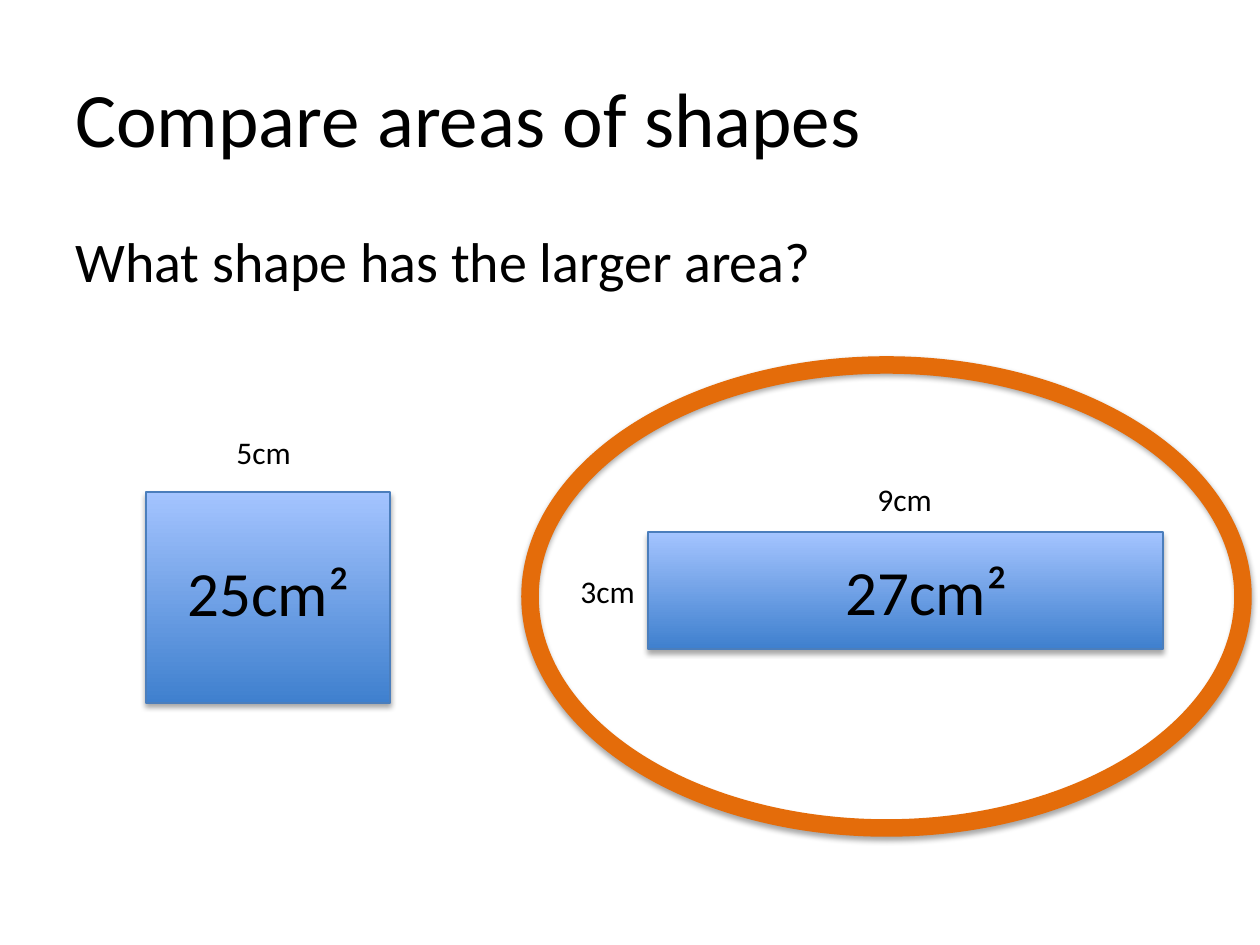
from lxml.etree import SubElement
from pptx import Presentation
from pptx.dml.color import RGBColor
from pptx.enum.shapes import MSO_SHAPE
from pptx.enum.text import MSO_ANCHOR
from pptx.oxml.ns import qn
from pptx.util import Emu, Pt

PX = 914400 / 126
FONT = "Calibri"
COLORS = {
    "text": "000000",
    "bottom": "3F80CE",
    "top": "A4C4FF",
    "outline": "4B7EBC",
    "ring": "E46C0A",
    "shadow": "000000",
}

# Boxes are left, top, width, height in px.
HEADINGS = [
    ("Compare areas of shapes", (63, 38, 1134, 158), 44, MSO_ANCHOR.MIDDLE),
    ("What shape has the larger area?", (63, 220, 1134, 624), 32, MSO_ANCHOR.TOP),
]
RECTANGLES = [(146, 492, 244, 211), (648, 532, 515, 117)]
LABEL_SIZE = (81, 50)
SIDE_LABELS = [("5cm", (224, 427)), ("9cm", (865, 474)), ("3cm", (568, 566))]
AREA_SIZE = (232, 89)
AREA_LABELS = [("25cm²", (175, 547)), ("27cm²", (833, 546))]
ANSWER_RING = (530, 365, 713, 463)


def emu(box):
    return [Emu(round(length * PX)) for length in box]


def color(name):
    return RGBColor.from_string(COLORS[name])


def add_text(page, text, box, size, anchor=MSO_ANCHOR.TOP):
    frame = page.shapes.add_textbox(*emu(box)).text_frame
    frame.word_wrap = True
    frame.vertical_anchor = anchor
    frame.text = text
    font = frame.paragraphs[0].runs[0].font
    font.name = FONT
    font.size = Pt(size)
    font.color.rgb = color("text")


def add_outlined(page, kind, box, line_color, line_width):
    """Add a preset shape with a line and a soft shadow below it."""
    shape = page.shapes.add_shape(kind, *emu(box))
    shape.line.color.rgb = color(line_color)
    shape.line.width = Pt(line_width)
    shape.shadow.inherit = False
    effects = shape._element.spPr.find(qn("a:effectLst"))
    shadow = SubElement(effects, qn("a:outerShdw"), blurRad=str(Pt(3.1)),
                        dist=str(Pt(1.8)), dir="5400000", rotWithShape="0")
    tint = SubElement(shadow, qn("a:srgbClr"), val=COLORS["shadow"])
    SubElement(tint, qn("a:alpha"), val="35000")
    return shape


def add_rectangle(page, box):
    fill = add_outlined(page, MSO_SHAPE.RECTANGLE, box, "outline", 0.75).fill
    fill.gradient()
    fill.gradient_angle = 90
    for stop, position, name in zip(fill.gradient_stops, (0, 1), ("bottom", "top")):
        stop.position = position
        stop.color.rgb = color(name)


def main():
    deck = Presentation()
    deck.slide_width, deck.slide_height = emu((1260, 945))
    page = deck.slides.add_slide(deck.slide_layouts[6])

    for heading in HEADINGS:
        add_text(page, *heading)
    for box in RECTANGLES:
        add_rectangle(page, box)
    for labels, box_size, size in ((SIDE_LABELS, LABEL_SIZE, 18),
                                   (AREA_LABELS, AREA_SIZE, 36)):
        for text, corner in labels:
            add_text(page, text, corner + box_size, size)
    ring = add_outlined(page, MSO_SHAPE.OVAL, ANSWER_RING, "ring", 10)
    ring.fill.background()

    deck.save("out.pptx")


if __name__ == "__main__":
    main()
